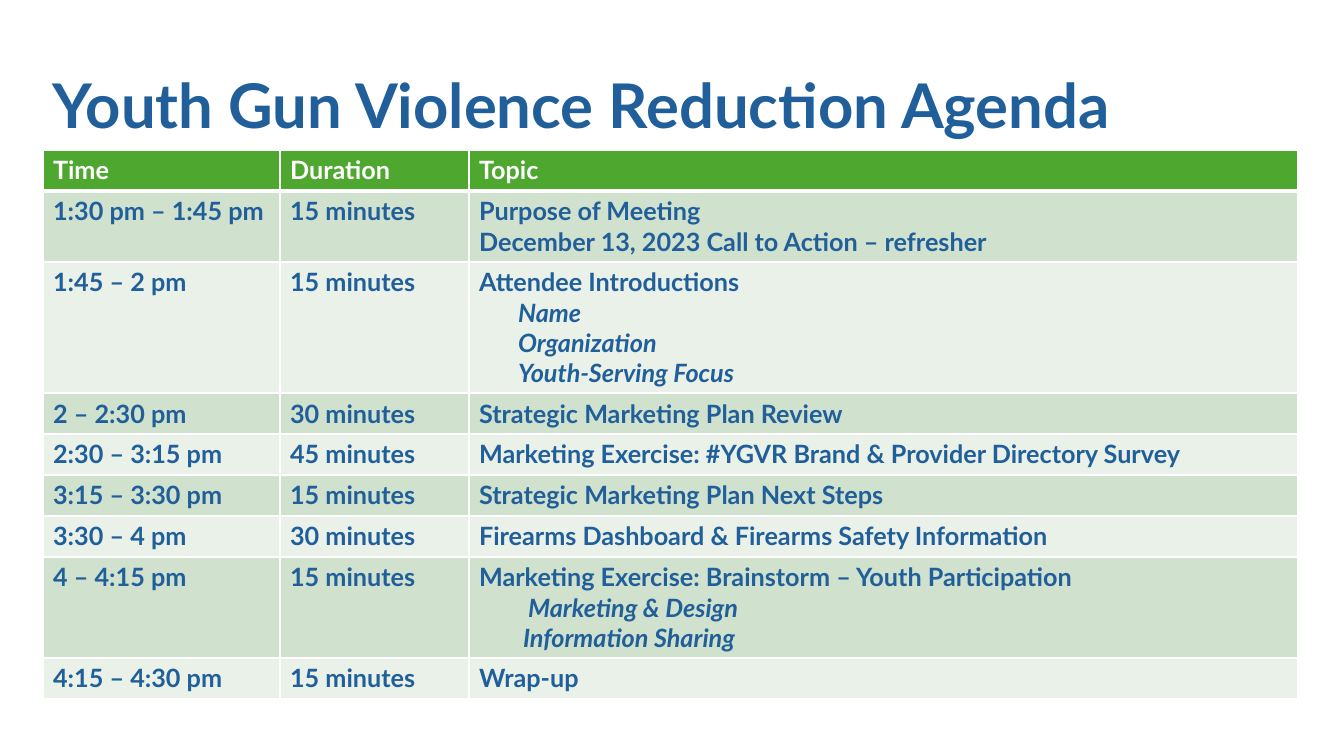
import dataclasses

import lxml.etree
import pptx
import pptx.dml.color
import pptx.enum.text
import pptx.oxml
import pptx.oxml.ns
import pptx.util

EMU_PER_PX = 914400 / 100.8
FONT = "Lato"
BLUE, GREEN, WHITE = "215F9A", "4EA72E", "FFFFFF"
BANDS = ("D0E1CD", "E9F1E8")
COLUMN_WIDTHS = (237, 189, 829)
LINE_HEIGHT, ROW_PADDING = 30, 11


@dataclasses.dataclass(frozen=True)
class SubTopic:
    text: str
    indent: int


@dataclasses.dataclass(frozen=True)
class Session:
    time: str
    duration: str
    topics: tuple[str, ...]
    subtopics: tuple[SubTopic, ...] = ()


HEADINGS = Session("Time", "Duration", ("Topic",))
SESSIONS = (
    Session("1:30 pm – 1:45 pm", "15 minutes",
            ("Purpose of Meeting", "December 13, 2023 Call to Action – refresher")),
    Session("1:45 – 2 pm", "15 minutes", ("Attendee Introductions",),
            (SubTopic("Name", 39), SubTopic("Organization", 39),
             SubTopic("Youth-Serving Focus", 39))),
    Session("2 – 2:30 pm", "30 minutes", ("Strategic Marketing Plan Review",)),
    Session("2:30 – 3:15 pm", "45 minutes",
            ("Marketing Exercise: #YGVR Brand & Provider Directory Survey",)),
    Session("3:15 – 3:30 pm", "15 minutes", ("Strategic Marketing Plan Next Steps",)),
    Session("3:30 – 4 pm", "30 minutes",
            ("Firearms Dashboard & Firearms Safety Information",)),
    Session("4 – 4:15 pm", "15 minutes",
            ("Marketing Exercise: Brainstorm – Youth Participation",),
            (SubTopic("Marketing & Design", 49), SubTopic("Information Sharing", 44))),
    Session("4:15 – 4:30 pm", "15 minutes", ("Wrap-up",)),
)


def px(length: int) -> pptx.util.Emu:
    """Turn whole pixels into EMU."""
    return pptx.util.Emu(round(length * EMU_PER_PX))


def rgb(value: str) -> pptx.dml.color.RGBColor:
    """Turn a hex string into a colour."""
    return pptx.dml.color.RGBColor.from_string(value)


def write(frame, text: str, *, size: int = 18, color: str = BLUE,
          italic: bool = False, indent: int = 0, spacing: float = 1.0) -> None:
    """Write one bold paragraph, filling the first one while it is empty."""
    first = frame.paragraphs[0]
    paragraph = frame.add_paragraph() if first.runs else first
    paragraph.line_spacing = spacing
    if indent:
        properties = paragraph._p.get_or_add_pPr()
        properties.set("marL", str(px(indent)))
        properties.set("indent", "0")
    run = paragraph.add_run()
    run.text = text
    run.font.name = FONT
    run.font.size = pptx.util.Pt(size)
    run.font.bold = True
    run.font.italic = italic
    run.font.color.rgb = rgb(color)


def set_borders(cell, top: int, bottom: int) -> None:
    """Give a cell white borders, with widths in points."""
    properties = cell._tc.get_or_add_tcPr()
    widths = {"lnL": 1, "lnR": 1, "lnT": top, "lnB": bottom}
    for position, (side, width) in enumerate(widths.items()):
        line = lxml.etree.Element(pptx.oxml.ns.qn(f"a:{side}"), w=str(pptx.util.Pt(width)))
        fill = lxml.etree.SubElement(line, pptx.oxml.ns.qn("a:solidFill"))
        lxml.etree.SubElement(fill, pptx.oxml.ns.qn("a:srgbClr"), val=WHITE)
        properties.insert(position, line)


def add_title(slide, text: str) -> None:
    """Add the slide title."""
    title = slide.shapes.add_textbox(px(43), px(36), px(1159), px(146))
    frame = title.text_frame
    frame.word_wrap = True
    frame.vertical_anchor = pptx.enum.text.MSO_ANCHOR.MIDDLE
    write(frame, text, size=44, spacing=0.9)


def fill_row(agenda, index: int, session: Session) -> None:
    """Fill one agenda row with a session."""
    heading = index == 0
    color = WHITE if heading else BLUE
    line_count = len(session.topics) + len(session.subtopics)
    agenda.rows[index].height = px(LINE_HEIGHT * line_count + ROW_PADDING)
    columns = ((session.time,), (session.duration,), session.topics)
    for column, lines in enumerate(columns):
        cell = agenda.cell(index, column)
        cell.fill.solid()
        cell.fill.fore_color.rgb = rgb(GREEN if heading else BANDS[(index - 1) % 2])
        set_borders(cell, 3 if index == 1 else 1, 3 if heading else 1)
        for line in lines:
            write(cell.text_frame, line, color=color)
    for subtopic in session.subtopics:
        write(agenda.cell(index, 2).text_frame, subtopic.text,
              italic=True, indent=subtopic.indent)


def add_agenda(slide) -> None:
    """Add the agenda table."""
    rows = (HEADINGS, *SESSIONS)
    agenda = slide.shapes.add_table(
        len(rows), len(COLUMN_WIDTHS), px(43), px(150), px(sum(COLUMN_WIDTHS)), px(548)).table
    for column, width in zip(agenda.columns, COLUMN_WIDTHS):
        column.width = px(width)
    for index, session in enumerate(rows):
        fill_row(agenda, index, session)


def main() -> None:
    """Build and save the slide."""
    presentation = pptx.Presentation()
    presentation.slide_width, presentation.slide_height = px(1344), px(756)
    slide = presentation.slides.add_slide(presentation.slide_layouts[6])
    add_title(slide, "Youth Gun Violence Reduction Agenda")
    add_agenda(slide)
    presentation.save("out.pptx")


if __name__ == "__main__":
    main()
